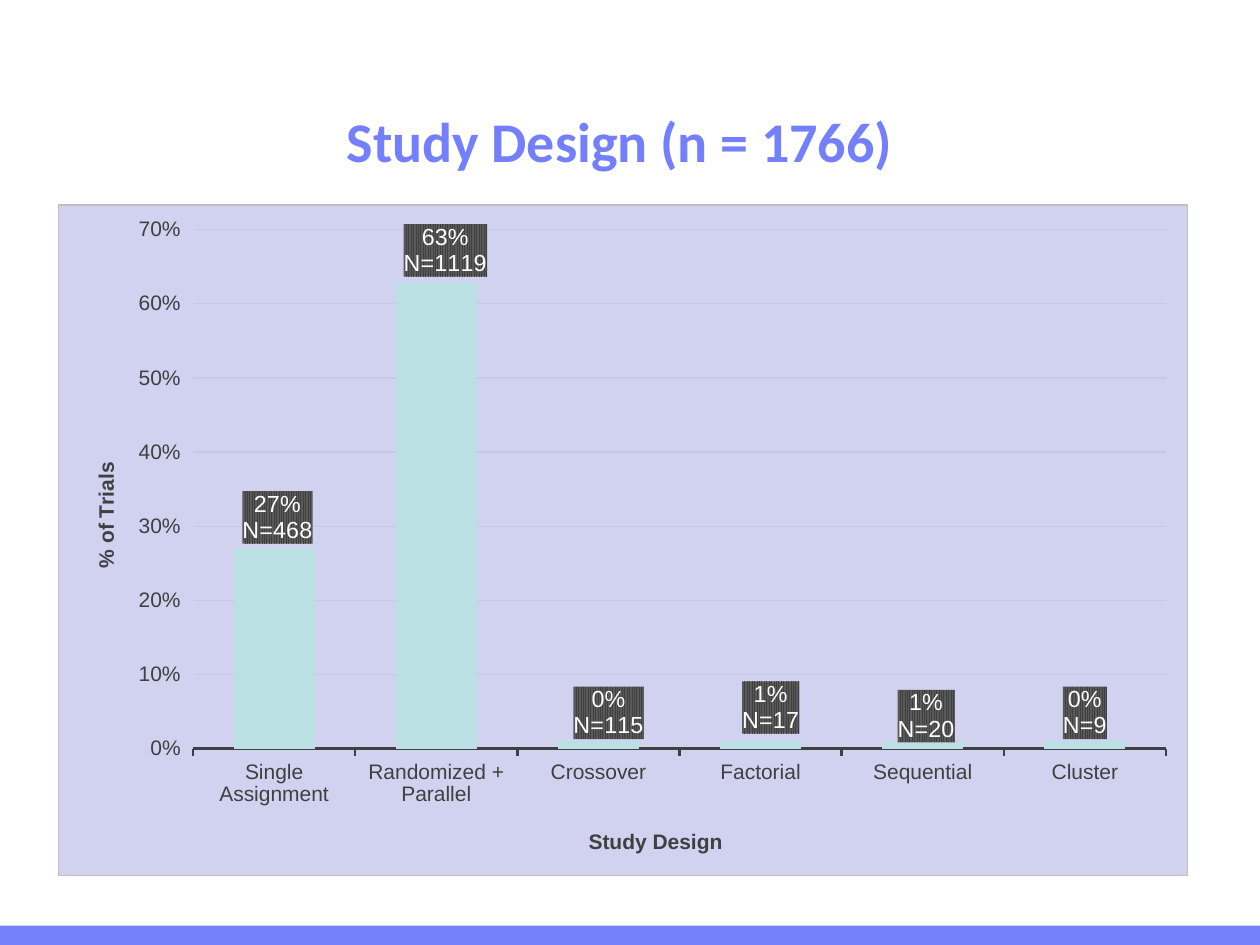
import pptx
import pptx.chart.data
import pptx.dml.color
import pptx.enum.chart
import pptx.enum.shapes
import pptx.enum.text
import pptx.oxml
import pptx.oxml.ns
import pptx.util

Pt = pptx.util.Pt
RGB = pptx.dml.color.RGBColor.from_string
NS = pptx.oxml.ns.nsdecls("c", "a")

THEME = {
    "accent": "7480FB", "panel": "D1D1F0", "border": "BFBFBF",
    "bar": "BBE0E3", "text": "404040", "grid": "C8C8E3",
    "label_text": "FFFFFF", "label_back": "595959",
    "title_size": 32, "axis_size": 12, "label_size": 13.3,
    "title_font": "Calibri", "chart_font": "Arial",
}


def style_font(font, name, size, color, bold=False):
    for key, value in {"name": name, "size": Pt(size), "bold": bold}.items():
        setattr(font, key, value)
    font.color.rgb = RGB(color)


def place(parent, index, target="", **values):
    """Give a chart part a manual layout, in fractions of the chart."""
    for old in parent.xpath("c:layout"):
        parent.remove(old)
    items = "".join(f'<c:{k} val="{v}"/>' for k, v in values.items())
    parent.insert(index, pptx.oxml.parse_xml(
        f"<c:layout {NS}><c:manualLayout>{target}{items}</c:manualLayout></c:layout>"))


prs = pptx.Presentation()
prs.slide_width, prs.slide_height = Pt(720), Pt(540)
s = prs.slides.add_slide(prs.slide_layouts[5])

# Bottom band
sp = s.shapes.add_shape(pptx.enum.shapes.MSO_SHAPE.RECTANGLE,
                        Pt(0), Pt(529), Pt(720), Pt(11))
sp.shadow.inherit = False
sp.fill.solid()
sp.fill.fore_color.rgb = RGB(THEME["accent"])
sp.line.fill.background()

# Title
title = s.shapes.title
box = {"left": 115.2, "top": 43.2, "width": 478, "height": 74.2}
for key, value in box.items():
    setattr(title, key, Pt(value))
tf = title.text_frame
tf.vertical_anchor = pptx.enum.text.MSO_ANCHOR.MIDDLE
p = tf.paragraphs[0]
p.alignment = pptx.enum.text.PP_ALIGN.CENTER
r = p.add_run()
r.text = "Study Design (n = 1766)"
style_font(r.font, THEME["title_font"], THEME["title_size"], THEME["accent"], True)

# Chart data: category, share, label, label shift right and down
designs = [
    ("Single Assignment", 0.27, "27%\nN=468", 0.003, 0),
    ("Randomized + Parallel", 0.63, "63%\nN=1119", 0.008, 0),
    ("Crossover", 0.01, "0%\nN=115", 0.009, 0.004),
    ("Factorial", 0.01, "1%\nN=17", 0.009, -0.004),
    ("Sequential", 0.01, "1%\nN=20", 0.003, 0.009),
    ("Cluster", 0.01, "0%\nN=9", 0, 0.004),
]
data = pptx.chart.data.CategoryChartData(number_format="0%")
data.categories = [d[0] for d in designs]
data.add_series("Series 1", [d[1] for d in designs])
chart = s.shapes.add_chart(pptx.enum.chart.XL_CHART_TYPE.COLUMN_CLUSTERED,
                           Pt(33.2), Pt(116.7), Pt(645.8), Pt(384), data).chart
chart.has_legend = False
chart.has_title = False
style_font(chart.font, THEME["chart_font"], THEME["axis_size"], THEME["text"])

# Chart panel and plot area
space = chart._chartSpace
space.xpath("c:chart")[0].addnext(pptx.oxml.parse_xml(
    f'<c:spPr {NS}><a:solidFill><a:srgbClr val="{THEME["panel"]}"/></a:solidFill>'
    f'<a:ln w="9525"><a:solidFill><a:srgbClr val="{THEME["border"]}"/></a:solidFill>'
    "</a:ln></c:spPr>"))
place(space.xpath("c:chart/c:plotArea")[0], 0, '<c:layoutTarget val="inner"/>',
      xMode="edge", yMode="edge", x=0.119, y=0.037, w=0.862, h=0.774)

# Axes
value_axis, category_axis = chart.value_axis, chart.category_axis
for axis, text, x, y in ((category_axis, "Study Design", 0.466, 0.925),
                         (value_axis, "% of Trials", 0.027, 0.378)):
    axis.major_tick_mark = pptx.enum.chart.XL_TICK_MARK.OUTSIDE
    style_font(axis.tick_labels.font, THEME["chart_font"], THEME["axis_size"], THEME["text"])
    p = axis.axis_title.text_frame.paragraphs[0]
    r = p.add_run()
    r.text = text
    style_font(r.font, THEME["chart_font"], THEME["axis_size"], THEME["text"], True)
    place(axis.axis_title._element, 1, xMode="edge", yMode="edge", x=x, y=y)
category_axis.format.line.color.rgb = RGB(THEME["text"])
category_axis.format.line.width = Pt(1.5)
scale = {"minimum_scale": 0, "maximum_scale": 0.7, "major_unit": 0.1,
         "has_major_gridlines": True}
for key, value in scale.items():
    setattr(value_axis, key, value)
value_axis.tick_labels.number_format = "0%"
value_axis.tick_labels.number_format_is_linked = False
value_axis.format.line.fill.background()
grid = value_axis.major_gridlines.format.line
grid.color.rgb = RGB(THEME["grid"])
grid.width = Pt(0.75)

# Columns
plot = chart.plots[0]
plot.gap_width = 100
plot.vary_by_categories = False
series = plot.series[0]
series.format.fill.solid()
series.format.fill.fore_color.rgb = RGB(THEME["bar"])

# Striped labels above the columns
for i, (_, _, text, dx, dy) in enumerate(designs):
    label = series.points[i].data_label
    label.text_frame.text = text
    for p in label.text_frame.paragraphs:
        style_font(p.runs[0].font, THEME["chart_font"], THEME["label_size"],
                   THEME["label_text"])
    label.position = pptx.enum.chart.XL_LABEL_POSITION.OUTSIDE_END
    element = series._element.xpath("c:dLbls/c:dLbl")[i]
    place(element, 1, x=dx, y=dy)
    element.xpath("c:tx")[0].addnext(pptx.oxml.parse_xml(
        f'<c:spPr {NS}><a:pattFill prst="ltVert">'
        f'<a:fgClr><a:srgbClr val="{THEME["text"]}"/></a:fgClr>'
        f'<a:bgClr><a:srgbClr val="{THEME["label_back"]}"/></a:bgClr>'
        "</a:pattFill></c:spPr>"))

prs.save("out.pptx")
